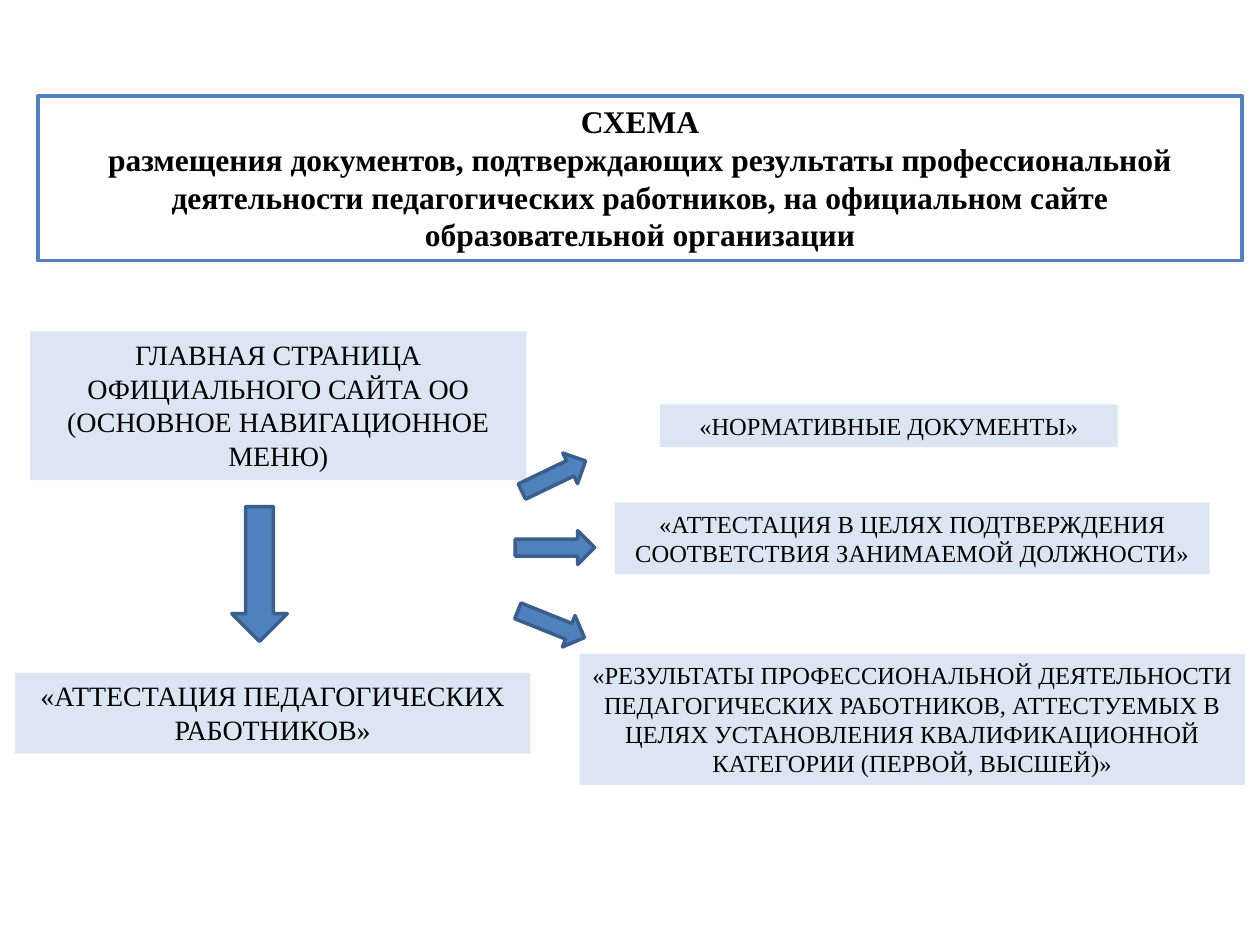
from pptx import Presentation
from pptx.dml.color import RGBColor
from pptx.enum.shapes import MSO_SHAPE as Geo
from pptx.enum.text import MSO_ANCHOR as Anchor, MSO_AUTO_SIZE as Fit, PP_ALIGN as Align
from pptx.util import Pt

WHITE = RGBColor(0xFF, 0xFF, 0xFF)
BLACK = RGBColor(0x00, 0x00, 0x00)
PALE = RGBColor(0xDC, 0xE6, 0xF2)
BLUE = RGBColor(0x4F, 0x81, 0xBD)
DARK = RGBColor(0x3A, 0x5F, 0x8C)

FRAME = {"word_wrap": True, "auto_size": Fit.SHAPE_TO_FIT_TEXT,
         "vertical_anchor": Anchor.TOP}
FONT = {"name": "Times New Roman", "bold": False}


def put(obj, vals):
    for key, val in vals.items():
        setattr(obj, key, val)


def add(slide, geo, box, part, fill, edge=None):
    """Add a shape at part, measured from the corner of box."""
    x, y, w, h = part
    shape = slide.shapes.add_shape(
        geo, Pt(box[0] + x), Pt(box[1] + y), Pt(w), Pt(h))
    shape.shadow.inherit = False
    shape.fill.solid()
    shape.fill.fore_color.rgb = fill
    if edge is None:
        shape.line.fill.background()
    else:
        shape.line.color.rgb = edge
        shape.line.width = Pt(2)
    return shape


def write(shape, lines, size, **extra):
    frame = shape.text_frame
    put(frame, FRAME)
    frame.text = "\n".join(lines)
    for para in frame.paragraphs:
        para.alignment = Align.CENTER
        font = para.runs[0].font
        put(font, {**FONT, "size": Pt(size), **extra})
        font.color.rgb = BLACK


def add_head(slide, box):
    shape = add(slide, Geo.RECTANGLE, box, (0, 0, *box[2:]), WHITE, BLUE)
    write(shape, [
        "СХЕМА",
        "размещения документов, подтверждающих результаты профессиональной "
        "деятельности педагогических работников, на официальном сайте "
        "образовательной организации",
    ], 18, bold=True)


def add_cards(slide, box, cards, size):
    """Stack pale cards centred in box, or moved sideways by shift."""
    for shift, y, w, h, text in cards:
        part = ((box[2] - w) / 2 + shift, y, w, h)
        write(add(slide, Geo.RECTANGLE, box, part, PALE), [text], size)


def add_menu(slide, box):
    add_cards(slide, box, [
        (3.2, 0, 283.7, 85,
         "ГЛАВНАЯ СТРАНИЦА ОФИЦИАЛЬНОГО САЙТА ОО "
         "(ОСНОВНОЕ НАВИГАЦИОННОЕ МЕНЮ)"),
        (0, 195.1, 294.5, 46.1, "«АТТЕСТАЦИЯ ПЕДАГОГИЧЕСКИХ РАБОТНИКОВ»"),
    ], 16)
    add(slide, Geo.DOWN_ARROW, box, (123.9, 100.1, 31.7, 77), BLUE, DARK)


def add_pages(slide, box):
    add_cards(slide, box, [
        (-13.3, 0, 261.4, 24.5, "«НОРМАТИВНЫЕ ДОКУМЕНТЫ»"),
        (0, 56.2, 339.8, 41,
         "«АТТЕСТАЦИЯ В ЦЕЛЯХ ПОДТВЕРЖДЕНИЯ СООТВЕТСТВИЯ "
         "ЗАНИМАЕМОЙ ДОЛЖНОСТИ»"),
        (0, 142.6, 380.2, 74.9,
         "«РЕЗУЛЬТАТЫ ПРОФЕССИОНАЛЬНОЙ ДЕЯТЕЛЬНОСТИ ПЕДАГОГИЧЕСКИХ "
         "РАБОТНИКОВ, АТТЕСТУЕМЫХ В ЦЕЛЯХ УСТАНОВЛЕНИЯ "
         "КВАЛИФИКАЦИОННОЙ КАТЕГОРИИ (ПЕРВОЙ, ВЫСШЕЙ)»"),
    ], 14)


def add_fan(slide, box):
    """Arrows from the menu to the three pages."""
    for x, y, h, turn in [(1.4, 0, 40.3, 244.3),
                          (2.1, 38.2, 45.4, 270),
                          (0, 84.2, 41, 291.9)]:
        part = (x, y, 19.4, h)
        add(slide, Geo.DOWN_ARROW, box, part, BLUE, DARK).rotation = turn


def main():
    deck = Presentation()
    put(deck, {"slide_width": Pt(720), "slide_height": Pt(540)})
    slide = deck.slides.add_slide(deck.slide_layouts[6])
    # Title
    add_head(slide, (21.6, 54.7, 688.3, 94.3))
    # Site menu on the left, its pages on the right
    add_menu(slide, (8.6, 189.4, 294.5, 241.2))
    add_pages(slide, (331.2, 231.1, 380.2, 217.5))
    # Arrows between them
    add_fan(slide, (305.3, 252, 21.5, 125.2))
    deck.save("out.pptx")


if __name__ == "__main__":
    main()
